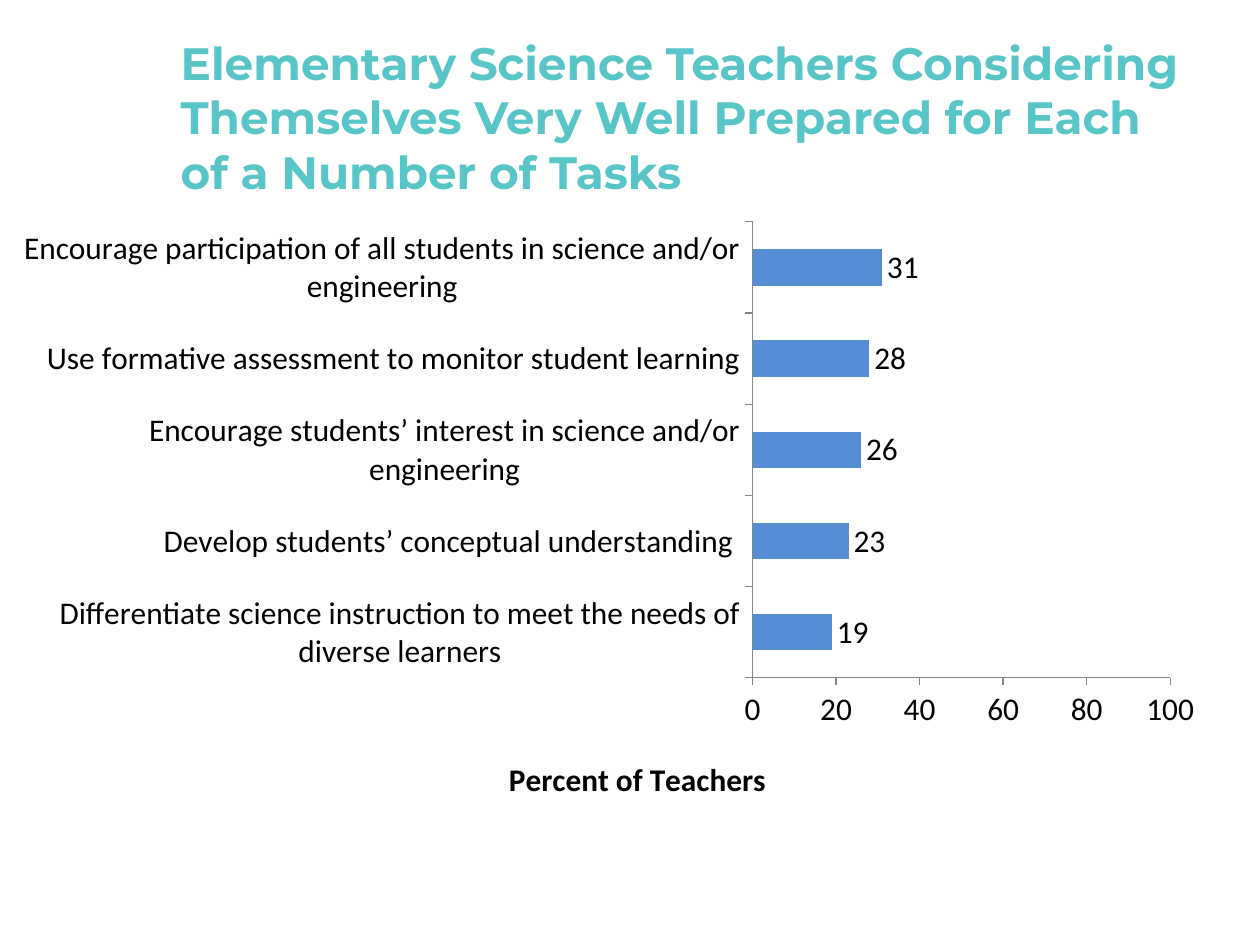
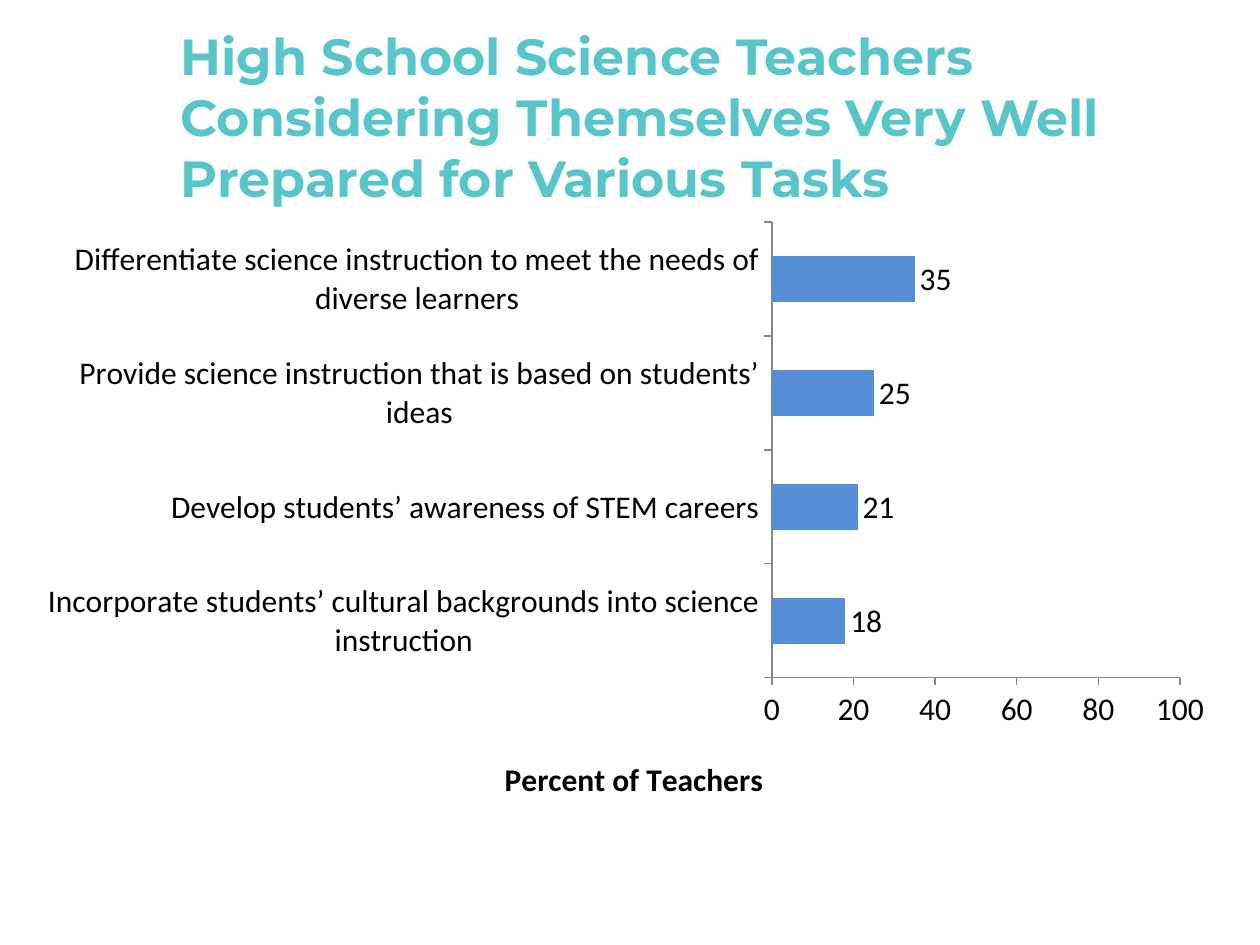
from lxml import etree
from pptx import Presentation
from pptx import util as u
from pptx.chart import data as chart_data
from pptx.dml.color import RGBColor
from pptx.enum import chart as c, text
from pptx.oxml import ns

TEAL = RGBColor(0x58, 0xC5, 0xC9)
BLUE = RGBColor(0x55, 0x8E, 0xD5)
GRAY = RGBColor(0x86, 0x86, 0x86)
BLACK = RGBColor(0, 0, 0)

PX = 914400 / 126
TITLE_BOX = (168, 38, 1029, 157)
CHART_TOP, CHART_HEIGHT = 210, 609
PLOT_TOP, PLOT_HEIGHT = 12, 456
AXIS_TITLE_TOP = 542

CHART_FONT = {"name": "Calibri", "size": u.Pt(18), "bold": False}
TITLE_FONT = {"name": "Montserrat", "bold": True}

PAGES = [
    {
        "title": "Elementary Science Teachers Considering Themselves Very Well "
                 "Prepared for Each of a Number of Tasks",
        "title_size": 25.9,
        "chart_box": (24, CHART_TOP, 1193, CHART_HEIGHT),
        "plot_box": (726, PLOT_TOP, 420, PLOT_HEIGHT),
        "tasks": {
            "Differentiate science instruction to meet the needs of diverse learners": 19,
            "Develop students’ conceptual understanding ": 23,
            "Encourage students’ interest in science and/or engineering": 26,
            "Use formative assessment to monitor student learning": 28,
            "Encourage participation of all students in science and/or engineering": 31,
        },
    },
    {
        "title": "High School Science Teachers Considering Themselves Very Well "
                 "Prepared for Various Tasks",
        "title_size": 29,
        "chart_box": (24, CHART_TOP, 1205, CHART_HEIGHT),
        "plot_box": (748, PLOT_TOP, 408, PLOT_HEIGHT),
        "tasks": {
            "Incorporate students’ cultural backgrounds into science instruction": 18,
            "Develop students’ awareness of STEM careers": 21,
            "Provide science instruction that is based on students’ ideas": 25,
            "Differentiate science instruction to meet the needs of diverse learners": 35,
        },
    },
]


def emu(box):
    """Turn a box in px into EMU lengths."""
    return [u.Emu(round(length * PX)) for length in box]


def apply(target, values, color=None):
    """Set attributes from a dict, and the font colour if one is given."""
    for name, value in values.items():
        setattr(target, name, value)
    if color is not None:
        target.color.rgb = color


def set_layout(parent, index, chart_box, part):
    """Fix the place of a chart part, given in px from the chart's corner."""
    for old in parent.findall(ns.qn("c:layout")):
        parent.remove(old)
    layout = etree.Element(ns.qn("c:layout"))
    manual = etree.SubElement(layout, ns.qn("c:manualLayout"))
    width, height = chart_box[2:]
    settings = {"xMode": "edge", "yMode": "edge"}
    if len(part) == 4:
        settings = {"layoutTarget": "inner", **settings}
    for name, length, whole in zip("xywh", part, (width, height) * 2):
        settings[name] = f"{length / whole:.4f}"
    for name, value in settings.items():
        etree.SubElement(manual, ns.qn(f"c:{name}")).set("val", value)
    parent.insert(index, layout)


def add_title(page, box, wording, size):
    """Place and format the title placeholder."""
    title = page.shapes.title
    title.left, title.top, title.width, title.height = emu(box)
    frame = title.text_frame
    frame.text = wording
    apply(frame, {"word_wrap": True, "auto_size": text.MSO_AUTO_SIZE.NONE,
                  "vertical_anchor": text.MSO_ANCHOR.MIDDLE})
    para = frame.paragraphs[0]
    para.alignment = text.PP_ALIGN.LEFT
    apply(para.runs[0].font, {**TITLE_FONT, "size": u.Pt(size)}, TEAL)


def format_axes(chart, box):
    """Format both axes and place the value axis title."""
    for axis in (chart.category_axis, chart.value_axis):
        apply(axis, {"has_major_gridlines": False,
                     "major_tick_mark": c.XL_TICK_MARK.OUTSIDE,
                     "minor_tick_mark": c.XL_TICK_MARK.NONE})
        apply(axis.tick_labels.font, CHART_FONT, BLACK)
        apply(axis.format.line, {"width": u.Pt(0.75)}, GRAY)
    apply(chart.value_axis, {"minimum_scale": 0, "maximum_scale": 100, "major_unit": 20})
    axis_title = chart.value_axis.axis_title
    axis_title.text_frame.text = "Percent of Teachers"
    span = axis_title.text_frame.paragraphs[0].runs[0]
    apply(span.font, {**CHART_FONT, "bold": True}, BLACK)
    set_layout(axis_title._element, 1, box, (475, AXIS_TITLE_TOP))


def add_task_chart(page, box, plot_box, tasks):
    """Add the bar chart of teachers for each task."""
    data = chart_data.CategoryChartData()
    data.categories = list(tasks)
    data.add_series("Series 1", list(tasks.values()))
    chart = page.shapes.add_chart(c.XL_CHART_TYPE.BAR_CLUSTERED, *emu(box), data).chart
    apply(chart, {"has_legend": False, "has_title": False})
    apply(chart.font, CHART_FONT, BLACK)
    format_axes(chart, box)
    plot = chart.plots[0]
    apply(plot, {"gap_width": 150, "vary_by_categories": False, "has_data_labels": True})
    apply(plot.data_labels, {"show_value": True,
                             "position": c.XL_LABEL_POSITION.OUTSIDE_END})
    apply(plot.data_labels.font, CHART_FONT, BLACK)
    fill = plot.series[0].format.fill
    fill.solid()
    fill.fore_color.rgb = BLUE
    set_layout(chart._chartSpace.chart.plotArea, 0, box, plot_box)


def main():
    """Build the deck."""
    deck = Presentation()
    deck.slide_width, deck.slide_height = u.Inches(10), u.Inches(7.5)
    for content in PAGES:
        page = deck.slides.add_slide(deck.slide_layouts[5])
        add_task_chart(page, content["chart_box"], content["plot_box"], content["tasks"])
        add_title(page, TITLE_BOX, content["title"], content["title_size"])
    deck.save("out.pptx")


if __name__ == "__main__":
    main()
